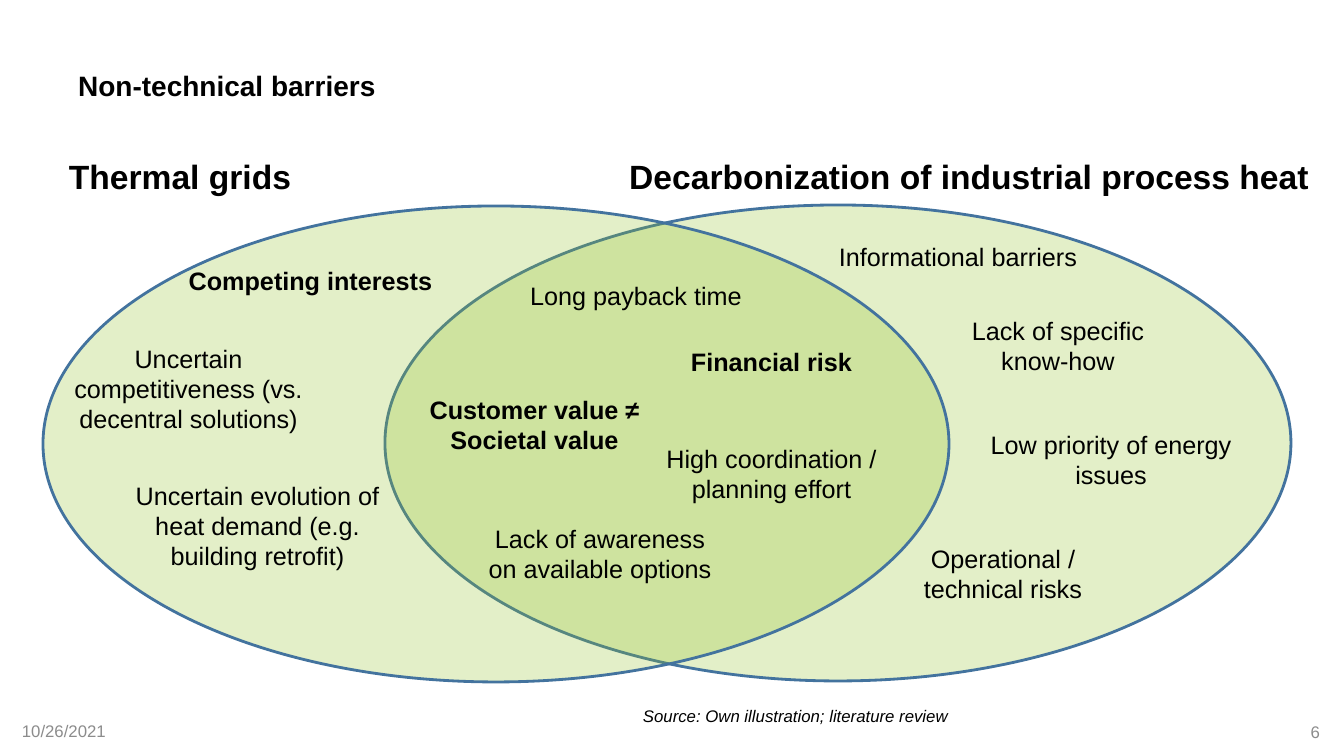
"""Build a slide with a two-set Venn diagram of non-technical barriers."""
from lxml import etree
from pptx import Presentation
from pptx.dml.color import RGBColor
from pptx.enum.shapes import MSO_SHAPE
from pptx.enum.text import MSO_ANCHOR, PP_ALIGN
from pptx.oxml.ns import qn
from pptx.util import Pt

LEFT, CENTER, RIGHT = PP_ALIGN.LEFT, PP_ALIGN.CENTER, PP_ALIGN.RIGHT
TOP, MIDDLE = MSO_ANCHOR.TOP, MSO_ANCHOR.MIDDLE
OVAL = MSO_SHAPE.OVAL

PX = 914400 / 100.8
SLIDE_SIZE = (1344, 756)
FONT = "Arial"
COLORS = {"text": "000000", "footer": "8C8C8C", "set": "90C226", "outline": "43739E"}
SET_OPACITY = 25
LABEL_HEIGHT, LABEL_LINE = 40, 31

TITLE = ("Non-technical barriers", (68, 22, 1033, 126))
FOOTERS = [
    ("10/26/2021", (12, 711, 302, 40), LEFT),
    ("6", (1028, 712, 302, 40), RIGHT),
]
SETS = [(385, 205, 906, 476), (43, 206, 906, 476)]
HEADINGS = [
    ("Thermal grids", (59, 151, 245, 50), LEFT, False),
    ("Decarbonization of industrial process heat", (594, 151, 750, 50), CENTER, True),
]
BARRIERS = [
    ("Competing interests", 165, 260, 291, 1, True),
    ("Long payback time", 509, 275, 254, 1, False),
    ("Financial risk", 655, 341, 233, 1, True),
    ("Informational barriers", 798, 236, 320, 1, False),
    ("Lack of specific know-how", 931, 310, 254, 2, False),
    ("Customer value ≠ Societal value", 398, 389, 273, 2, True),
    ("Uncertain competitiveness (vs. decentral solutions)", 37, 338, 303, 3, False),
    ("Low priority of energy issues", 968, 424, 286, 2, False),
    ("Operational / technical risks", 888, 538, 230, 2, False),
    ("High coordination / planning effort", 618, 438, 307, 2, False),
    ("Uncertain evolution of heat demand (e.g. building retrofit)", 106, 475, 303, 3, False),
    ("Lack of awareness on available options", 473, 518, 254, 2, False),
]
SOURCE = ("Source: Own illustration; literature review", (633, 701, 328, 30))


def emu(lengths):
    return [round(length * PX) for length in lengths]


def write(box, text, size, color="text", align=LEFT, anchor=TOP,
          bold=False, italic=False, wrap=True):
    frame = box.text_frame
    frame.text = text
    frame.word_wrap = wrap
    frame.vertical_anchor = anchor
    para = frame.paragraphs[0]
    para.alignment = align
    font = para.font
    font.name, font.size = FONT, Pt(size)
    font.bold, font.italic = bold, italic
    font.color.rgb = RGBColor.from_string(COLORS[color])


def add_text(page, text, place, size, **style):
    write(page.shapes.add_textbox(*emu(place)), text, size, **style)


def add_set(page, place):
    oval = page.shapes.add_shape(OVAL, *emu(place))
    oval.shadow.inherit = False
    oval.fill.solid()
    oval.fill.fore_color.rgb = RGBColor.from_string(COLORS["set"])
    color = oval.fill._xPr.find(qn("a:solidFill"))[0]
    etree.SubElement(color, qn("a:alpha"), val=str(SET_OPACITY * 1000))
    oval.line.color.rgb = RGBColor.from_string(COLORS["outline"])
    oval.line.width = Pt(2)


def main():
    deck = Presentation()
    deck.slide_width, deck.slide_height = emu(SLIDE_SIZE)
    page = deck.slides.add_slide(deck.slide_layouts[5])

    text, place = TITLE
    title = page.shapes.title
    title.left, title.top, title.width, title.height = emu(place)
    write(title, text, 20, anchor=MIDDLE, bold=True)

    for text, place, align in FOOTERS:
        add_text(page, text, place, 12, color="footer", align=align, anchor=MIDDLE)
    for place in SETS:
        add_set(page, place)
    for text, place, align, wrap in HEADINGS:
        add_text(page, text, place, 24, align=align, bold=True, wrap=wrap)
    for text, left, top, width, lines, bold in BARRIERS:
        height = LABEL_HEIGHT + LABEL_LINE * (lines - 1)
        add_text(page, text, (left, top, width, height), 18, align=CENTER, bold=bold)
    text, place = SOURCE
    add_text(page, text, place, 12, italic=True, wrap=False)

    deck.save("out.pptx")


if __name__ == "__main__":
    main()
